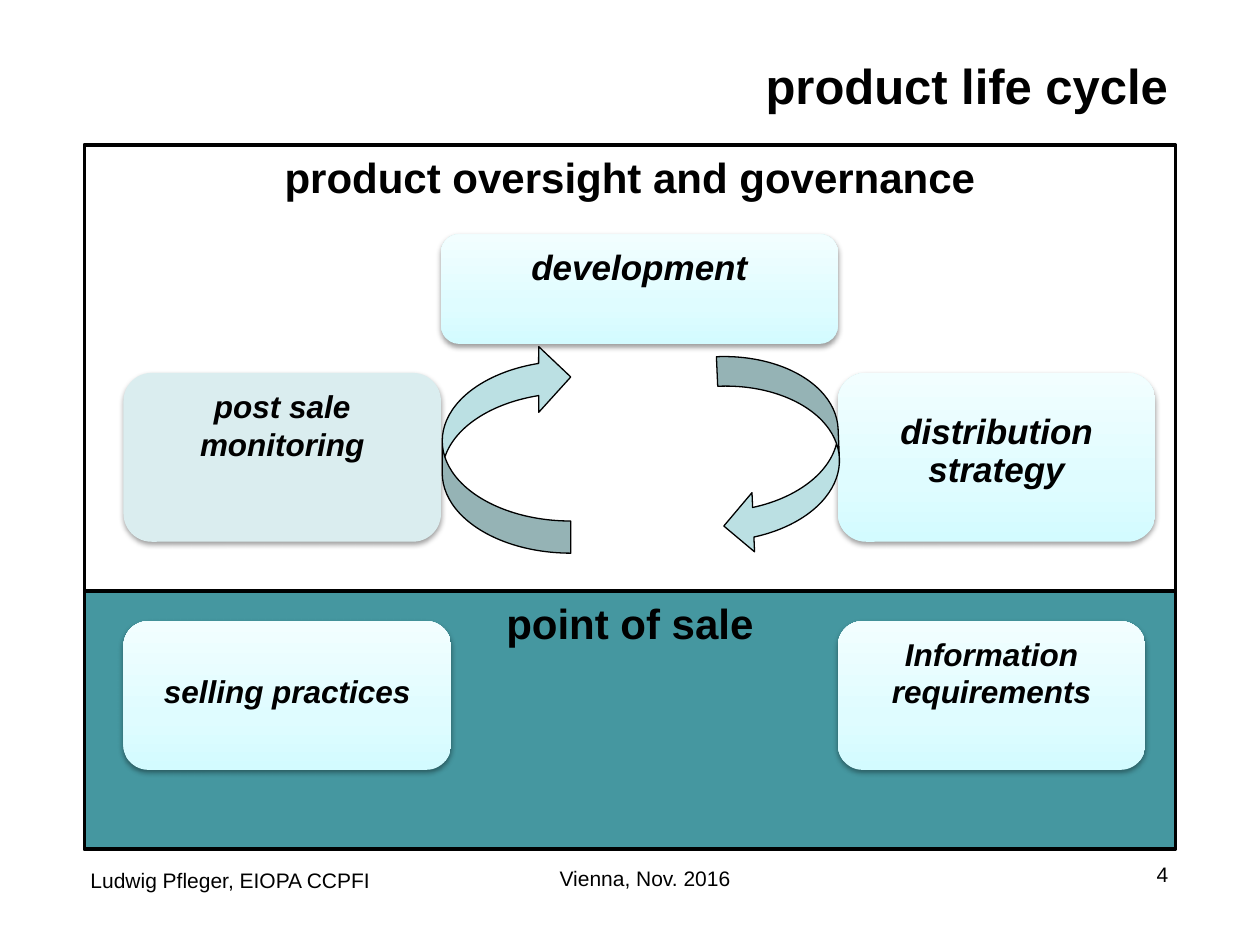
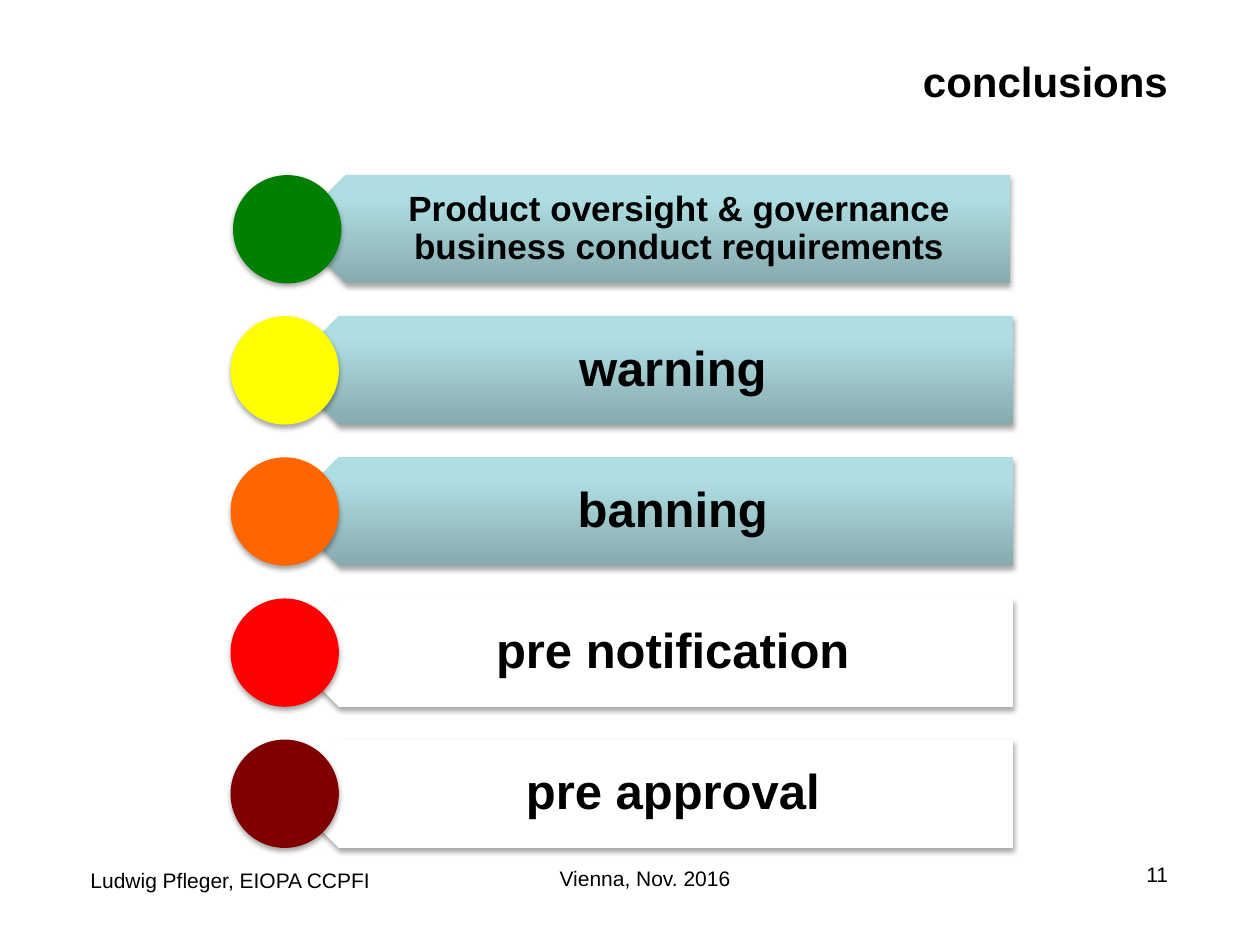
from collections import namedtuple

from lxml.etree import SubElement
from pptx import Presentation
from pptx.dml.color import RGBColor
from pptx.enum.shapes import MSO_SHAPE
from pptx.enum.text import MSO_ANCHOR, MSO_AUTO_SIZE, PP_ALIGN
from pptx.oxml.ns import qn
from pptx.util import Inches, Pt

BLACK = RGBColor(0x00, 0x00, 0x00)
WHITE = RGBColor(0xFF, 0xFF, 0xFF)
TEAL = RGBColor(0x45, 0x97, 0xA0)
PALE_TEAL = RGBColor(0xDA, 0xED, 0xEF)
ARROW_BLUE = RGBColor(0xBB, 0xE0, 0xE3)
GREEN = RGBColor(0x00, 0x80, 0x00)
YELLOW = RGBColor(0xFF, 0xFF, 0x00)
ORANGE = RGBColor(0xFF, 0x66, 0x00)
RED = RGBColor(0xFF, 0x00, 0x00)
MAROON = RGBColor(0x80, 0x00, 0x00)

ICE = [(0, RGBColor(0xD3, 0xFB, 0xFF)), (35, RGBColor(0xDF, 0xFC, 0xFF)),
       (100, RGBColor(0xF2, 0xFE, 0xFF))]
STEEL = [(0, RGBColor(0x87, 0xAB, 0xAE)), (80, RGBColor(0xAF, 0xDE, 0xE2)),
         (100, RGBColor(0xAF, 0xE0, 0xE4))]

FONT = "Arial"
INSETS = (0.1, 0.05, 0.1, 0.05)
FOOTER_LEFT = "Ludwig Pfleger, EIOPA CCPFI"
FOOTER_CENTRE = "Vienna, Nov. 2016"

Box = namedtuple("Box", "x y w h")


def inches(box):
    return [Inches(v) for v in box]


def write(s, lines, size, bold=True, italic=False, align=PP_ALIGN.CENTER,
          anchor=MSO_ANCHOR.TOP, insets=INSETS, spacing=None):
    tf = s.text_frame
    tf.word_wrap = True
    tf.auto_size = MSO_AUTO_SIZE.NONE
    tf.vertical_anchor = anchor
    (tf.margin_left, tf.margin_top,
     tf.margin_right, tf.margin_bottom) = inches(insets)
    for i, line in enumerate(lines):
        p = tf.add_paragraph() if i else tf.paragraphs[0]
        p.alignment = align
        if spacing:
            p.line_spacing = spacing
        r = p.add_run()
        r.text = line
        r.font.name = FONT
        r.font.size = Pt(size)
        r.font.bold = bold
        r.font.italic = italic
        r.font.color.rgb = BLACK


def add_text(slide, box, text, size, **style):
    write(slide.shapes.add_textbox(*inches(box)), [text], size, **style)


def paint(s, fill):
    if isinstance(fill, RGBColor):
        s.fill.solid()
        s.fill.fore_color.rgb = fill
        return
    s.fill.gradient()
    s.fill.gradient_angle = 90
    stops = next(s._element.iter(qn("a:gsLst")))
    for stop in list(stops):
        stops.remove(stop)
    for position, color in fill:
        stop = SubElement(stops, qn("a:gs"), pos=str(position * 1000))
        SubElement(stop, qn("a:srgbClr"), val=str(color))


def cast_shadow(s, alpha, distance):
    effects = s._element.spPr.find(qn("a:effectLst"))
    shadow = SubElement(effects, qn("a:outerShdw"), blurRad=str(Pt(3.1)),
                        dist=str(Pt(distance)), dir="5400000",
                        rotWithShape="0")
    color = SubElement(shadow, qn("a:srgbClr"), val=str(BLACK))
    SubElement(color, qn("a:alpha"), val=str(alpha * 1000))


def add_figure(slide, kind, box, fill, line=None, shadow=None):
    s = slide.shapes.add_shape(kind, *inches(box))
    s.shadow.inherit = False
    paint(s, fill)
    if line:
        s.line.color.rgb = BLACK
        s.line.width = Pt(line)
    else:
        s.line.fill.background()
    if shadow:
        cast_shadow(s, *shadow)
    return s


def add_frame(prs, title, title_size, number):
    slide = prs.slides.add_slide(prs.slide_layouts[5])
    s = slide.shapes.title
    s.left, s.top, s.width, s.height = inches(Box(1.63, 0.39, 7.74, 1))
    write(s, [title], title_size, align=PP_ALIGN.RIGHT)
    add_text(slide, Box(0.62, 6.79, 2.76, 0.39), FOOTER_LEFT, 12, bold=False,
             align=PP_ALIGN.LEFT, anchor=MSO_ANCHOR.MIDDLE)
    add_text(slide, Box(3.42, 6.82, 3.4, 0.29), FOOTER_CENTRE, 12, bold=False)
    add_text(slide, Box(7.04, 6.79, 2.33, 0.31), str(number), 12, bold=False,
             align=PP_ALIGN.RIGHT)
    return slide


def add_panel(slide, box, heading, fill):
    s = add_figure(slide, MSO_SHAPE.RECTANGLE, box, fill, line=2)
    write(s, [heading], 24)


def add_card(slide, box, lines, size, fill=ICE, **style):
    s = add_figure(slide, MSO_SHAPE.ROUNDED_RECTANGLE, box, fill,
                   shadow=(38, 1.6))
    write(s, lines, size, italic=True, **style)


def add_cycle_arrow(slide, box, rotation, head=0.5):
    s = add_figure(slide, MSO_SHAPE.CURVED_LEFT_ARROW, box, ARROW_BLUE,
                   line=0.75)
    s.adjustments[1] = head
    s.rotation = rotation


def add_governance(slide, box):
    x, y, w, h = box
    add_panel(slide, box, "product oversight and governance", WHITE)
    add_card(slide, Box(x + 5.98, y + 1.81, 2.52, 1.34),
             ["distribution strategy"], 20, anchor=MSO_ANCHOR.MIDDLE,
             insets=(0.1, 0.05, 0.1, 0.13), spacing=0.9)
    add_card(slide, Box(x + 2.83, y + 0.71, 3.15, 0.87), ["development"], 20)
    add_card(slide, Box(x + 0.31, y + 1.81, 2.52, 1.34),
             ["post sale monitoring"], 18, fill=PALE_TEAL)
    add_cycle_arrow(slide, Box(x + 5.05, y + 1.66, 0.94, 1.58), 357.5)
    add_cycle_arrow(slide, Box(x + 2.84, y + 1.58, 1.02, 1.66), 180, 0.512)


def add_point_of_sale(slide, box):
    x, y, w, h = box
    add_panel(slide, box, "point of sale", TEAL)
    add_card(slide, Box(x + 0.31, y + 0.24, 2.6, 1.18),
             ["selling practices"], 18, anchor=MSO_ANCHOR.MIDDLE,
             insets=(0.1, 0.05, 0.1, 0.12))
    add_card(slide, Box(x + 5.98, y + 0.24, 2.44, 1.18),
             ["Information", "requirements"], 18)


def add_measure(slide, box, text, light, fill, size=28, indent=0.43,
                margins=(0.38, 0.12, 0.22, 0.12)):
    x, y, w, h = box
    shadow = (35, 1.8)
    plate = add_figure(slide, MSO_SHAPE.PENTAGON,
                       Box(x + indent, y, w - indent, h), fill, shadow=shadow)
    plate._element.spPr.xfrm.set("flipH", "1")
    label_x = indent + 0.22
    add_text(slide, Box(x + label_x, y, w - label_x, h), text, size,
             anchor=MSO_ANCHOR.MIDDLE, insets=margins, spacing=0.9)
    add_figure(slide, MSO_SHAPE.OVAL, Box(x, y, h, h), light, shadow=shadow)


def add_measures(slide, box):
    x, y, w, h = box
    pitch, height = 1.12, 0.86
    add_measure(slide, Box(x + 0.02, y, w - 0.04, height),
                "Product oversight & governance business conduct requirements",
                GREEN, STEEL, size=20, indent=0.47,
                margins=(0.38, 0.08, 0.16, 0.08))
    measures = [("warning", YELLOW, STEEL), ("banning", ORANGE, STEEL),
                ("pre notification", RED, WHITE),
                ("pre approval", MAROON, WHITE)]
    for i, (text, light, fill) in enumerate(measures, 1):
        add_measure(slide, Box(x, y + i * pitch, w, height), text, light, fill)


def main():
    prs = Presentation()
    prs.slide_width, prs.slide_height = Inches(10), Inches(7.5)

    slide = add_frame(prs, "product life cycle", 28, 4)
    add_governance(slide, Box(0.67, 1.15, 8.66, 3.54))
    add_point_of_sale(slide, Box(0.67, 4.69, 8.66, 2.05))

    slide = add_frame(prs, "conclusions", 24, 11)
    add_measures(slide, Box(1.83, 1.39, 6.21, 5.34))

    prs.save("out.pptx")


if __name__ == "__main__":
    main()
